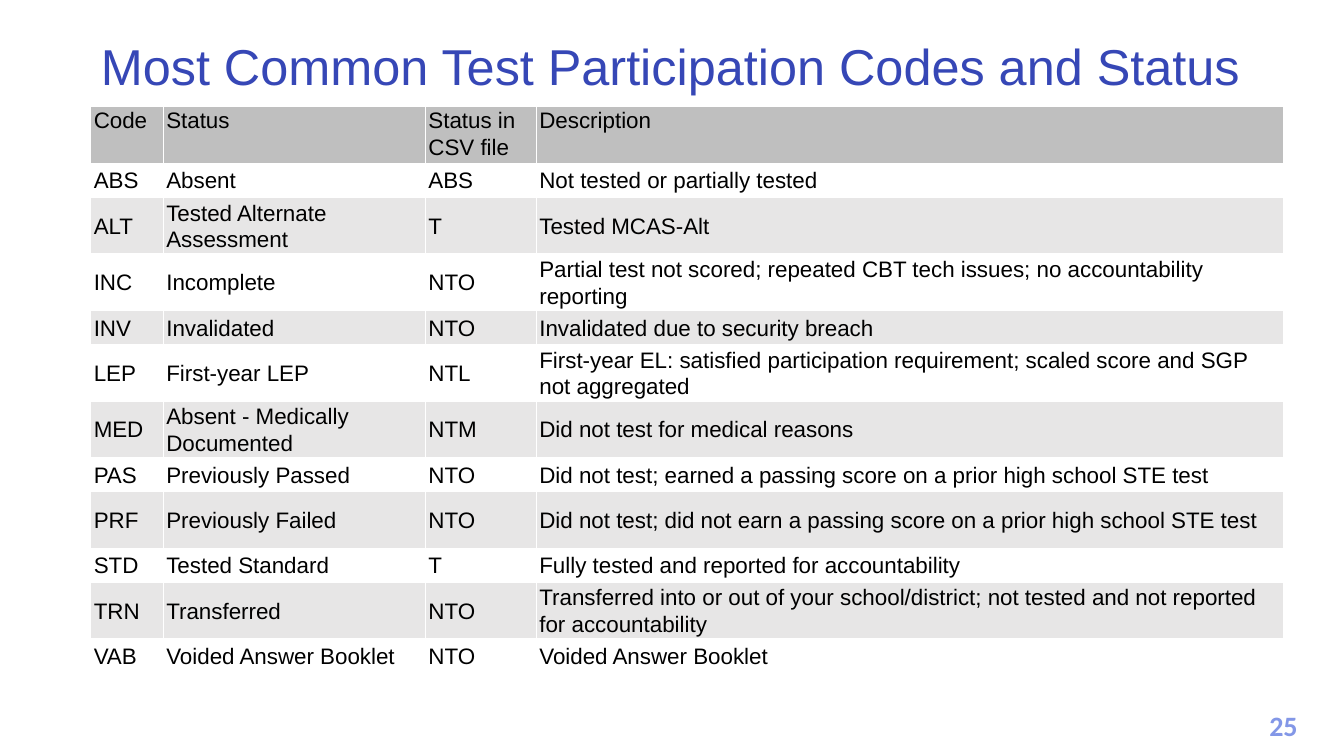
from lxml.etree import SubElement
from pptx import Presentation
from pptx.dml.color import RGBColor
from pptx.enum.text import MSO_ANCHOR, MSO_AUTO_SIZE, PP_ALIGN
from pptx.oxml.ns import qn
from pptx.util import Inches, Pt

# Content
TITLE = "Most Common Test Participation Codes and Status"
PAGE = "25"
HEADER = ("Code", "Status", "Status in CSV file", "Description")
CODES = [
    ("ABS", "Absent", "ABS", "Not tested or partially tested"),
    ("ALT", "Tested Alternate Assessment", "T", "Tested MCAS-Alt"),
    ("INC", "Incomplete", "NTO",
     "Partial test not scored; repeated CBT tech issues; no accountability reporting"),
    ("INV", "Invalidated", "NTO", "Invalidated due to security breach"),
    ("LEP", "First-year LEP", "NTL",
     "First-year EL: satisfied participation requirement; scaled score and SGP not aggregated"),
    ("MED", "Absent - Medically Documented", "NTM", "Did not test for medical reasons"),
    ("PAS", "Previously Passed", "NTO",
     "Did not test; earned a passing score on a prior high school STE test"),
    ("PRF", "Previously Failed", "NTO",
     "Did not test; did not earn a passing score on a prior high school STE test"),
    ("STD", "Tested Standard", "T", "Fully tested and reported for accountability"),
    ("TRN", "Transferred", "NTO",
     "Transferred into or out of your school/district; not tested and not reported for accountability"),
    ("VAB", "Voided Answer Booklet", "NTO", "Voided Answer Booklet"),
]
COLORS = {"title": "3647B6", "page": "8397E7", "text": "000000",
          "header": "BFBFBF", "band": "E7E6E6", "plain": "FFFFFF", "border": "FFFFFF"}

# Grid, in inches
WIDTH, HEIGHT = 13.33, 7.5
LEFT, TITLE_TOP, TABLE_TOP = 0.9, 0.32, 1.06
COLUMNS = (0.72, 2.6, 1.1, 7.41)
ONE_LINE, TWO_LINES = 0.34, 0.56
TALL_ROWS = {"Code", "ALT", "INC", "LEP", "MED", "PRF", "TRN"}


def style(p, size, color, name="Arial", bold=False):
    for r in p.runs:
        r.font.size, r.font.name, r.font.bold = Pt(size), name, bold
        r.font.color.rgb = RGBColor.from_string(COLORS[color])


def add_borders(cell):
    tc_pr = cell._tc.get_or_add_tcPr()
    for i, side in enumerate(("lnL", "lnR", "lnT", "lnB")):
        ln = SubElement(tc_pr, qn(f"a:{side}"), w=str(Pt(1)))
        fill = SubElement(ln, qn("a:solidFill"))
        SubElement(fill, qn("a:srgbClr"), val=COLORS["border"])
        tc_pr.insert(i, ln)


def fill_cell(cell, text, fill, anchor):
    cell.fill.solid()
    cell.fill.fore_color.rgb = RGBColor.from_string(COLORS[fill])
    cell.margin_left = cell.margin_right = Inches(0.03)
    cell.margin_top = cell.margin_bottom = 0
    cell.vertical_anchor = anchor
    cell.text_frame.text = text
    p = cell.text_frame.paragraphs[0]
    p.line_spacing, p.space_after = 1.07, Pt(8)
    style(p, 16, "text")
    add_borders(cell)


prs = Presentation()
prs.slide_width, prs.slide_height = Inches(WIDTH), Inches(HEIGHT)
s = prs.slides.add_slide(prs.slide_layouts[5])

# Title
title = s.shapes.title
title.left, title.top = Inches(LEFT), Inches(TITLE_TOP)
title.width, title.height = Inches(WIDTH - LEFT), Inches(TABLE_TOP - TITLE_TOP)
tf = title.text_frame
tf.text = TITLE
tf.auto_size = MSO_AUTO_SIZE.NONE
tf.vertical_anchor = MSO_ANCHOR.MIDDLE
p = tf.paragraphs[0]
p.alignment, p.line_spacing = PP_ALIGN.LEFT, 0.9
style(p, 36, "title")

# Table of codes
rows = [HEADER] + CODES
heights = [TWO_LINES if row[0] in TALL_ROWS else ONE_LINE for row in rows]
table = s.shapes.add_table(len(rows), len(COLUMNS), Inches(LEFT), Inches(TABLE_TOP),
                           Inches(sum(COLUMNS)), Inches(sum(heights))).table
for column, width in zip(table.columns, COLUMNS):
    column.width = Inches(width)
for i, (row, height) in enumerate(zip(rows, heights)):
    table.rows[i].height = Inches(height)
    fill = "header" if i == 0 else "plain" if i % 2 else "band"
    anchor = MSO_ANCHOR.TOP if i == 0 else MSO_ANCHOR.MIDDLE
    for j, text in enumerate(row):
        fill_cell(table.cell(i, j), text, fill, anchor)

# Page number
page = s.shapes.add_textbox(Inches(12.42), Inches(6.98), Inches(0.62), Inches(0.44))
tf = page.text_frame
tf.word_wrap = True
tf.text = PAGE
p = tf.paragraphs[0]
p.alignment = PP_ALIGN.CENTER
style(p, 20, "page", "Calibri", True)

prs.save("out.pptx")
